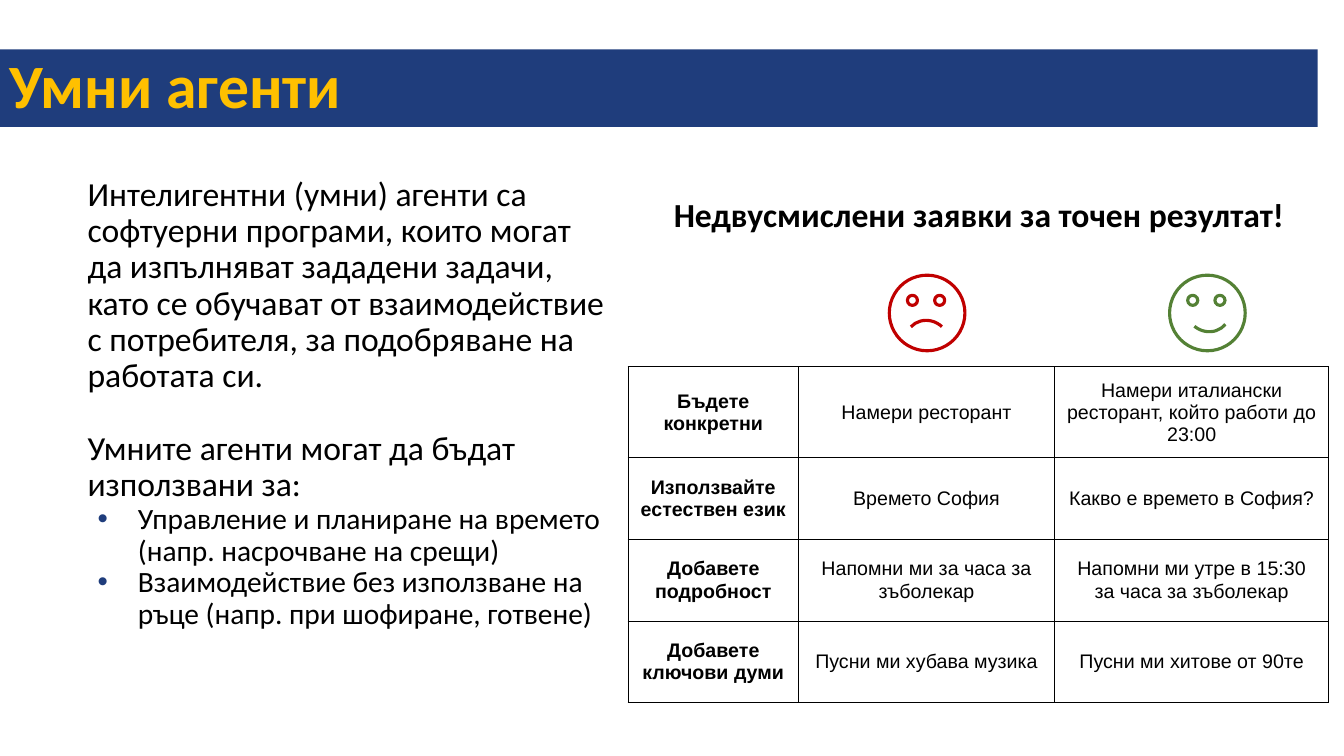
from lxml import etree
from pptx import Presentation
from pptx.dml.color import RGBColor
from pptx.enum.shapes import MSO_SHAPE
from pptx.enum.text import MSO_ANCHOR, PP_ALIGN
from pptx.oxml.ns import qn
from pptx.util import Inches, Pt

RECT, OVAL, ARC = MSO_SHAPE.RECTANGLE, MSO_SHAPE.OVAL, MSO_SHAPE.ARC
LEFT, CENTER = PP_ALIGN.LEFT, PP_ALIGN.CENTER
TOP, MIDDLE = MSO_ANCHOR.TOP, MSO_ANCHOR.MIDDLE
COLORS = {"navy": "1F3D7C", "gold": "FFC000", "black": "000000",
          "white": "FFFFFF", "red": "C00000", "green": "548135"}
RGB = {name: RGBColor.from_string(value) for name, value in COLORS.items()}

prs = Presentation()
prs.slide_width, prs.slide_height = Inches(13.33), Inches(7.5)
s = prs.slides.add_slide(prs.slide_layouts[6])


def write(p, text, color="black", align=LEFT, spacing=0.9, **fmt):
    p.alignment, p.line_spacing = align, spacing
    r = p.add_run()
    r.text = text
    r.font.color.rgb = RGB[color]
    for key, value in {"name": "Calibri", "size": Pt(24), "bold": False, **fmt}.items():
        setattr(r.font, key, value)


def outline(shapes, kind, x, y, w, h, fill=None, line=None):
    sp = shapes.add_shape(kind, Inches(x), Inches(y), Inches(w), Inches(h))
    sp.shadow.inherit = False
    if fill:
        sp.fill.solid()
        sp.fill.fore_color.rgb = RGB[fill]
    else:
        sp.fill.background()
    if line:
        sp.line.color.rgb, sp.line.width = RGB[line], Pt(2.25)
    else:
        sp.line.fill.background()
    return sp


# Title band
band = outline(s.shapes, RECT, 0, 0.49, 13.07, 0.77, fill="navy")
band.text_frame.word_wrap = True
band.text_frame.vertical_anchor = MIDDLE
write(band.text_frame.paragraphs[0], "Умни агенти", "gold", size=Pt(44), bold=True)

# Explanation with bullets
tf = s.shapes.add_textbox(Inches(0.77), Inches(1.71), Inches(5.37), Inches(5.05)).text_frame
tf.word_wrap, tf.vertical_anchor = True, TOP
write(tf.paragraphs[0], "Интелигентни (умни) агенти са софтуерни програми, които могат "
      "да изпълняват зададени задачи, като се обучават от взаимодействие "
      "с потребителя, за подобряване на работата си.")
p = tf.add_paragraph()
p.space_before = Pt(26)
write(p, "Умните агенти могат да бъдат използвани за:")
for use in ("Управление и планиране на времето (напр. насрочване на срещи)",
            "Взаимодействие без използване на ръце (напр. при шофиране, готвене)"):
    p = tf.add_paragraph()
    pPr = p._p.get_or_add_pPr()
    pPr.set("marL", str(Inches(0.5)))
    pPr.set("indent", str(Inches(-0.4)))
    bullet_color = etree.SubElement(pPr, qn("a:buClr"))
    etree.SubElement(bullet_color, qn("a:srgbClr"), val=COLORS["navy"])
    etree.SubElement(pPr, qn("a:buFont"), typeface="Arial")
    etree.SubElement(pPr, qn("a:buChar"), char="•")
    write(p, use, size=Pt(21))

# Heading over the table
TABLE_X, TABLE_W = 6.23, 6.96
tf = s.shapes.add_textbox(Inches(TABLE_X), Inches(1.92), Inches(TABLE_W), Inches(0.64)).text_frame
tf.word_wrap = True
write(tf.paragraphs[0], "Недвусмислени заявки за точен резултат!", align=CENTER, bold=True)

# Table of weak and good requests
ROWS = [
    ("Бъдете конкретни", "Намери ресторант",
     "Намери италиански ресторант, който работи до 23:00"),
    ("Използвайте естествен език", "Времето София", "Какво е времето в София?"),
    ("Добавете подробност", "Напомни ми за часа за зъболекар",
     "Напомни ми утре в 15:30 за часа за зъболекар"),
    ("Добавете ключови думи", "Пусни ми хубава музика", "Пусни ми хитове от 90те"),
]
COLS, ROW_H = (1.69, 2.54, 2.72), 0.81
table = s.shapes.add_table(len(ROWS), len(COLS), Inches(TABLE_X), Inches(3.64),
                           Inches(TABLE_W), Inches(ROW_H * len(ROWS))).table
table.first_row = table.horz_banding = False
for column, width in zip(table.columns, COLS):
    column.width = Inches(width)
for i, row in enumerate(ROWS):
    table.rows[i].height = Inches(ROW_H)
    for j, text in enumerate(row):
        cell = table.cell(i, j)
        cell.fill.background()
        cell.vertical_anchor = MIDDLE
        for side in ("left", "right", "top", "bottom"):
            setattr(cell, f"margin_{side}", Inches(0.1))
        write(cell.text_frame.paragraphs[0], text, align=CENTER, spacing=1.0,
              name="Arial", size=Pt(14), bold=j == 0)
        tcPr = cell._tc.get_or_add_tcPr()
        for k, edge in enumerate(("lnL", "lnR", "lnT", "lnB")):
            ln = etree.Element(qn(f"a:{edge}"), w=str(Pt(0.75)))
            solid = etree.SubElement(ln, qn("a:solidFill"))
            etree.SubElement(solid, qn("a:srgbClr"), val=COLORS["black"])
            tcPr.insert(k, ln)

# Sad and happy faces: colour, left edge, mouth offset and rotation
FACE_Y = 2.73
for color, x, mouth_y, turn in (("red", 8.82, 0.44, 312.7), ("green", 11.6, 0.12, 129.5)):
    face = s.shapes.add_group_shape().shapes
    for dx, dy, size in ((0, 0, 0.75), (0.18, 0.2, 0.1), (0.45, 0.2, 0.1)):
        outline(face, OVAL, x + dx, FACE_Y + dy, size, size, "white", color)
    mouth = outline(face, ARC, x + 0.17, FACE_Y + mouth_y, 0.42, 0.45, line=color)
    mouth.rotation = turn

prs.save("out.pptx")
